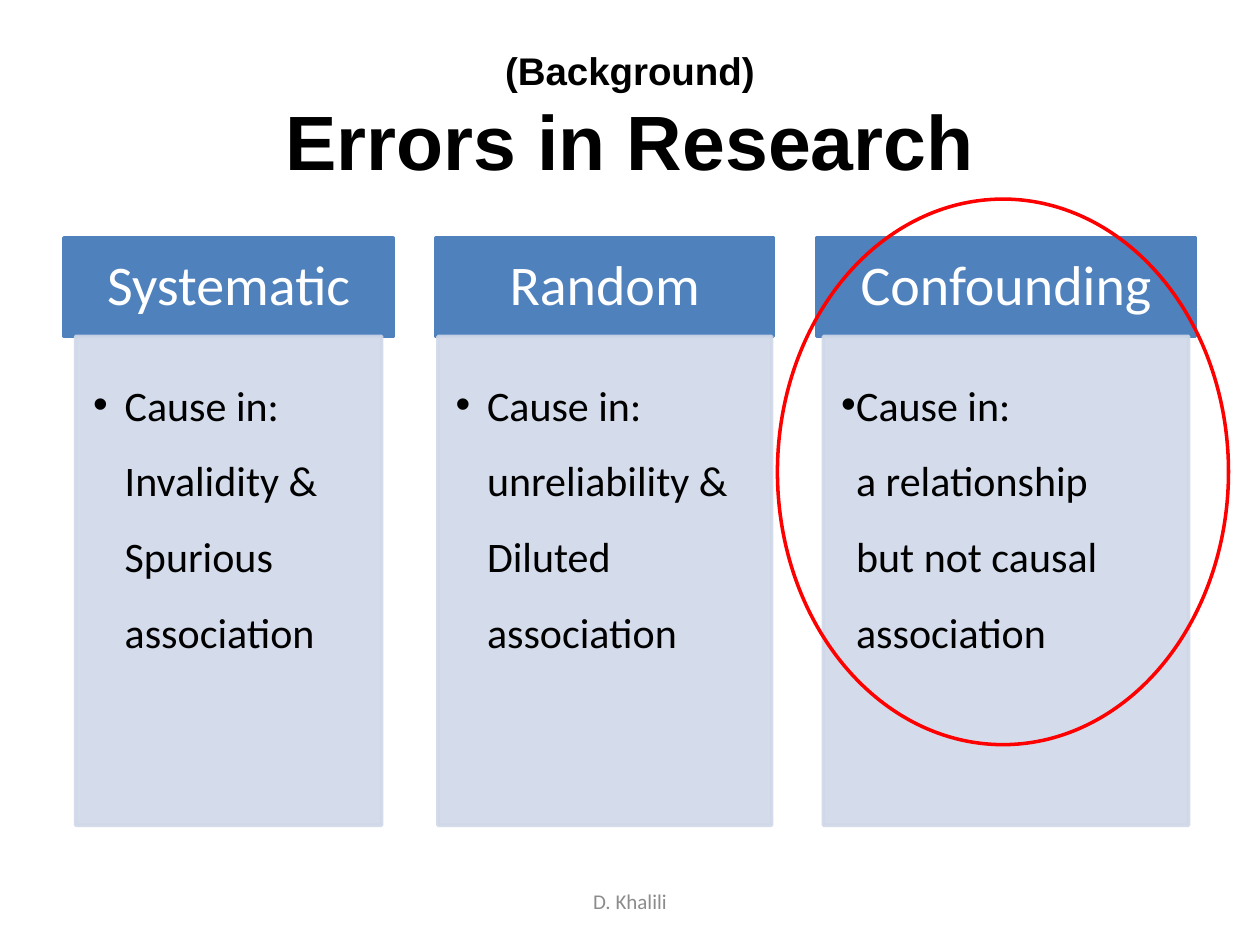
from dataclasses import dataclass

from lxml import etree
from pptx import Presentation
from pptx.dml.color import RGBColor
from pptx.enum.shapes import MSO_SHAPE
from pptx.enum.text import MSO_ANCHOR, PP_ALIGN
from pptx.oxml.ns import qn
from pptx.util import Inches, Pt

RECT, OVAL = MSO_SHAPE.RECTANGLE, MSO_SHAPE.OVAL
TOP, MIDDLE = MSO_ANCHOR.TOP, MSO_ANCHOR.MIDDLE
LEFT, CENTER = PP_ALIGN.LEFT, PP_ALIGN.CENTER
WIDTH, HEIGHT = Inches(10), Inches(7.5)


@dataclass(frozen=True)
class Theme:
    title_font: str = "Arial"
    body_font: str = "Calibri"
    ink: str = "000000"
    head_text: str = "FFFFFF"
    head_fill: str = "4F81BD"
    body_fill: str = "D0D8E8"
    highlight: str = "FF0000"
    muted: str = "8C8C8C"
    body_opacity: int = 90
    line: float = 2
    overline: float = 22
    title: float = 44
    head: float = 32
    body: float = 24
    footer: float = 12


THEME = Theme()
HEAD_TOP, HEAD_HEIGHT = 25.2, 10.4
BODY_TOP, BODY_HEIGHT = HEAD_TOP + HEAD_HEIGHT, 51.73
HEAD_INSETS = (0.25, 0.14, 0.25, 0.14)
BODY_INSETS = (0.14, 0.14, 0.19, 0.21)

# heading, left %, width %, body inset %, bullet indent (in), lines
COLUMNS = [
    ("Systematic", 5.1, 26.1, 0.9, 0.25,
     ["Cause in:", "Invalidity & Spurious association"]),
    ("Random", 34.6, 26.8, 0.15, 0.25,
     ["Cause in:", "unreliability & Diluted association"]),
    ("Confounding", 64.8, 30.1, 0.55, 0.12,
     ["Cause in:", "a relationship", "but not causal association"]),
]


def area(left, top, width, height):
    """Turn percentages of the slide into lengths."""
    return (int(WIDTH * left / 100), int(HEIGHT * top / 100),
            int(WIDTH * width / 100), int(HEIGHT * height / 100))


def add_run(p, text, size, color, font=THEME.body_font, bold=False):
    r = p.add_run()
    r.text = text
    r.font.size, r.font.name, r.font.bold = Pt(size), font, bold
    r.font.color.rgb = RGBColor.from_string(color)


def setup_text(sp, anchor, align, insets=(0.1, 0.05, 0.1, 0.05)):
    """Lay out the text frame and return its first paragraph."""
    tf = sp.text_frame
    tf.word_wrap = True
    tf.vertical_anchor = anchor
    (tf.margin_left, tf.margin_top,
     tf.margin_right, tf.margin_bottom) = map(Inches, insets)
    p = tf.paragraphs[0]
    p.alignment = align
    return p


def set_opacity(color_format_parent, percent):
    for color in color_format_parent.iter(qn("a:srgbClr")):
        etree.SubElement(color, qn("a:alpha"), val=str(percent * 1000))


def add_figure(slide, kind, box, line, fill=None, opacity=100):
    sp = slide.shapes.add_shape(kind, *area(*box))
    sp.shadow.inherit = False
    sp.line.color.rgb = RGBColor.from_string(line)
    sp.line.width = Pt(THEME.line)
    if fill:
        sp.fill.solid()
        sp.fill.fore_color.rgb = RGBColor.from_string(fill)
    else:
        sp.fill.background()
    if opacity < 100:
        set_opacity(sp.element.spPr, opacity)
    return sp


def add_bullet(p, indent):
    pPr = p._p.get_or_add_pPr()
    pPr.set("marL", str(Inches(indent)))
    pPr.set("indent", str(-Inches(indent)))
    etree.SubElement(pPr, qn("a:buFont"), typeface=THEME.title_font)
    etree.SubElement(pPr, qn("a:buChar"), char="•")


def add_column(slide, heading, left, width, inset, indent, lines):
    head = add_figure(slide, RECT, (left, HEAD_TOP, width, HEAD_HEIGHT),
                      THEME.head_fill, THEME.head_fill)
    p = setup_text(head, MIDDLE, CENTER, HEAD_INSETS)
    p.line_spacing = 0.9
    add_run(p, heading, THEME.head, THEME.head_text)

    box = (left + inset, BODY_TOP, width - 2 * inset, BODY_HEIGHT)
    body = add_figure(slide, RECT, box, THEME.body_fill, THEME.body_fill,
                      THEME.body_opacity)
    p = setup_text(body, TOP, LEFT, BODY_INSETS)
    p.line_spacing = 1.5
    add_bullet(p, indent)
    for i, line in enumerate(lines):
        if i:
            p.add_line_break()
        add_run(p, line, THEME.body, THEME.ink)


def add_title(slide, overline, title):
    sp = slide.shapes.add_textbox(*area(5, 4, 90, 16.67))
    p = setup_text(sp, MIDDLE, CENTER)
    add_run(p, overline, THEME.overline, THEME.ink, THEME.title_font, True)
    p.add_line_break()
    add_run(p, title, THEME.title, THEME.ink, THEME.title_font, True)


def add_footer(slide, text):
    sp = slide.shapes.add_textbox(*area(34.15, 92.67, 31.7, 5.33))
    add_run(setup_text(sp, MIDDLE, CENTER), text, THEME.footer, THEME.muted)


def main():
    prs = Presentation()
    prs.slide_width, prs.slide_height = WIDTH, HEIGHT
    slide = prs.slides.add_slide(prs.slide_layouts[6])
    add_title(slide, "(Background)", "Errors in Research")
    for column in COLUMNS:
        add_column(slide, *column)
    add_figure(slide, OVAL, (61.7, 21.07, 35.8, 57.73), THEME.highlight)
    add_footer(slide, "D. Khalili")
    prs.save("out.pptx")


if __name__ == "__main__":
    main()
